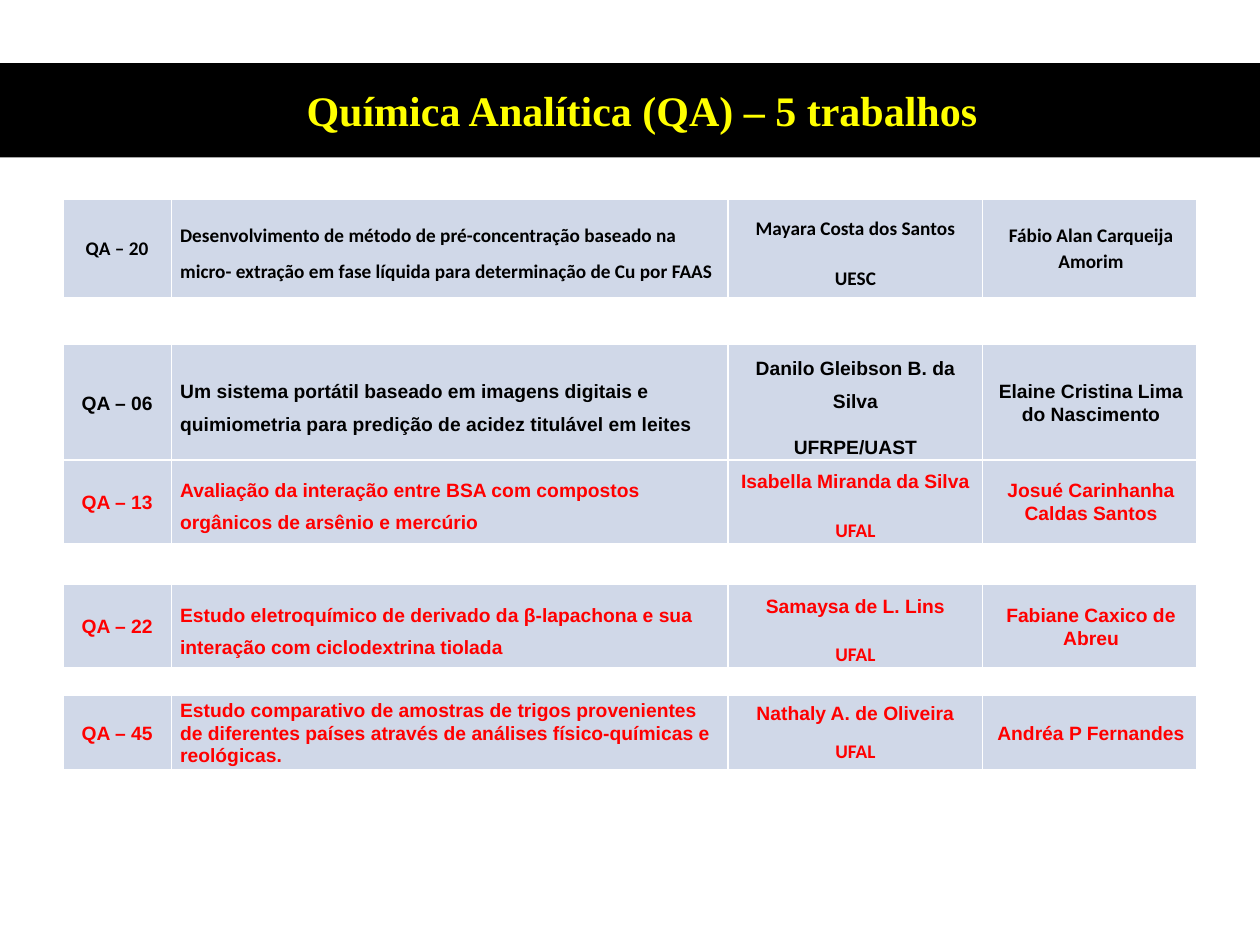
from lxml.etree import SubElement
from pptx import Presentation
from pptx.dml.color import RGBColor
from pptx.enum.shapes import MSO_SHAPE
from pptx.enum.text import MSO_ANCHOR, MSO_AUTO_SIZE, PP_ALIGN
from pptx.oxml.ns import qn
from pptx.util import Inches, Pt

BLACK = RGBColor(0x00, 0x00, 0x00)
WHITE = RGBColor(0xFF, 0xFF, 0xFF)
YELLOW = RGBColor(0xFF, 0xFF, 0x00)
RED = RGBColor(0xFF, 0x00, 0x00)
CELL_BLUE = RGBColor(0xD0, 0xD8, 0xE8)

COLUMNS = (0.86, 4.42, 2.02, 1.7)
LEFT, WIDTH = 0.5, 9

WORKS = [
    dict(top=1.58, height=0.78, font="Calibri", color=BLACK,
         code="QA – 20", author="Mayara Costa dos Santos", school="UESC",
         title="Desenvolvimento de método de pré-concentração baseado na "
               "micro- extração em fase líquida para determinação de Cu por FAAS",
         advisor="Fábio Alan Carqueija Amorim"),
    dict(top=2.73, height=0.52, color=BLACK, school_font="Arial",
         code="QA – 06", author="Danilo Gleibson B. da Silva", school="UFRPE/UAST",
         title="Um sistema portátil baseado em imagens digitais e "
               "quimiometria para predição de acidez titulável em leites",
         advisor="Elaine Cristina Lima do Nascimento"),
    dict(top=3.65, height=0.52,
         code="QA – 13", author="Isabella Miranda da Silva", school="UFAL",
         title="Avaliação da interação entre BSA com compostos "
               "orgânicos de arsênio e mercúrio",
         advisor="Josué Carinhanha Caldas Santos"),
    dict(top=4.64, height=0.52,
         code="QA – 22", author="Samaysa de L. Lins", school="UFAL",
         title="Estudo eletroquímico de derivado da β-lapachona e sua "
               "interação com ciclodextrina tiolada",
         advisor="Fabiane Caxico de Abreu"),
    dict(top=5.52, height=0.37, spacing=1.07,
         code="QA – 45", author="Nathaly A. de Oliveira", school="UFAL",
         title="Estudo comparativo de amostras de trigos provenientes de "
               "diferentes países através de análises físico-químicas e reológicas.",
         advisor="Andréa P Fernandes"),
]


def write(p, text, *, font="Arial", size=11, color=BLACK, align=PP_ALIGN.CENTER,
          spacing=None, after=None, indent=0):
    p.alignment = align
    if spacing:
        p.line_spacing = spacing
    if after is not None:
        p.space_after = Pt(after)
    if indent:
        p._p.get_or_add_pPr().set("marL", str(Inches(indent)))
    r = p.add_run()
    r.text = text
    r.font.name = font
    r.font.size = Pt(size)
    r.font.bold = True
    r.font.color.rgb = color


def style_cell(cell):
    cell.vertical_anchor = MSO_ANCHOR.MIDDLE
    cell.margin_left = cell.margin_right = Inches(0.07)
    cell.margin_top = cell.margin_bottom = 0
    tcPr = cell._tc.get_or_add_tcPr()
    for side in ("a:lnL", "a:lnR", "a:lnT", "a:lnB"):
        ln = SubElement(tcPr, qn(side), w=str(Pt(1)))
        fill = SubElement(ln, qn("a:solidFill"))
        SubElement(fill, qn("a:srgbClr"), val=str(WHITE))
    cell.fill.solid()
    cell.fill.fore_color.rgb = CELL_BLUE


def add_banner(s, left, top, width, height):
    sp = s.shapes.add_shape(MSO_SHAPE.RECTANGLE, Inches(left), Inches(top),
                            Inches(width), Inches(height))
    sp.shadow.inherit = False
    sp.fill.solid()
    sp.fill.fore_color.rgb = BLACK
    sp.line.fill.background()
    box = s.shapes.add_textbox(Inches(left + 0.27), Inches(top + 0.12),
                               Inches(width - 0.35), Inches(0.5))
    tf = box.text_frame
    tf.word_wrap = True
    tf.auto_size = MSO_AUTO_SIZE.SHAPE_TO_FIT_TEXT
    write(tf.paragraphs[0], "Química Analítica (QA) – 5 trabalhos",
          font="Times New Roman", size=24, color=YELLOW)


def add_work(s, left, width, *, top, height, code, title, author, school, advisor,
             font="Arial", school_font="Calibri", color=RED, spacing=1.5):
    table = s.shapes.add_table(1, len(COLUMNS), Inches(left), Inches(top),
                               Inches(width), Inches(height)).table
    table.first_row = table.horz_banding = False
    table.rows[0].height = Inches(height)
    for col, share in zip(table.columns, COLUMNS):
        col.width = Inches(width * share / sum(COLUMNS))
    base = dict(font=font, color=color, after=8, spacing=1.07)
    loose = {**base, "spacing": spacing}
    contents = [
        [(code, base)],
        [(title, {**loose, "align": PP_ALIGN.LEFT})],
        [(author, loose), (school, {**loose, "font": school_font})],
        [(advisor, {**base, "indent": 0.02})],
    ]
    for cell, lines in zip(table.rows[0].cells, contents):
        style_cell(cell)
        tf = cell.text_frame
        for i, (text, fmt) in enumerate(lines):
            write(tf.add_paragraph() if i else tf.paragraphs[0], text, **fmt)


def main():
    prs = Presentation()
    prs.slide_width, prs.slide_height = Inches(10), Inches(7.5)
    s = prs.slides.add_slide(prs.slide_layouts[6])
    add_banner(s, 0, 0.5, 10, 0.75)
    for work in WORKS:
        add_work(s, LEFT, WIDTH, **work)
    prs.save("out.pptx")


if __name__ == "__main__":
    main()
